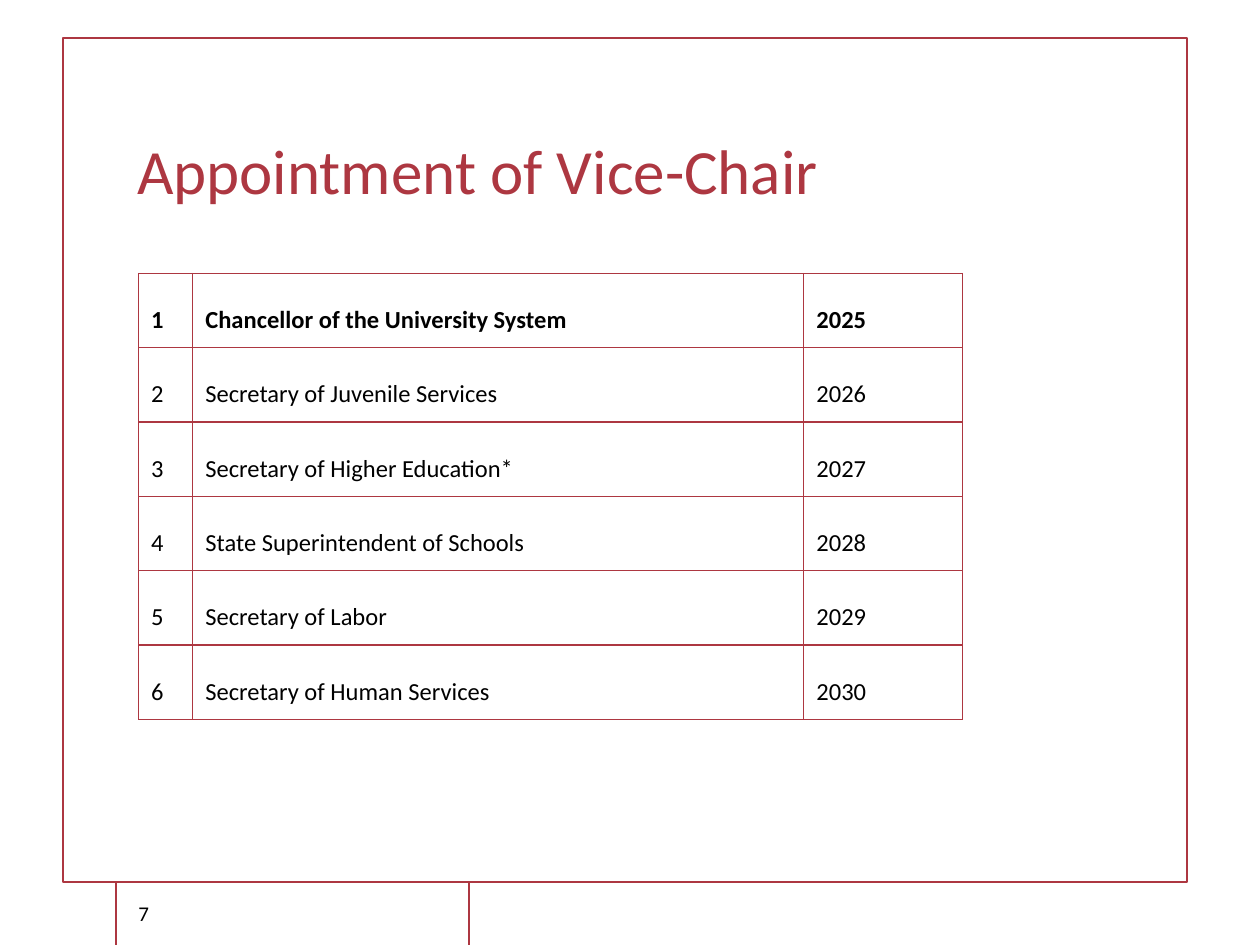
from lxml.etree import SubElement
from pptx import Presentation
from pptx.dml.color import RGBColor
from pptx.enum.shapes import MSO_SHAPE as SHAPE
from pptx.enum.text import MSO_ANCHOR as ANCHOR
from pptx.oxml.ns import qn
from pptx.util import Inches, Pt

RED, BLACK, WHITE = "AD3741", "000000", "FFFFFF"


def rgb(hex_color):
    return RGBColor.from_string(hex_color)


def write(tf, text, size=14, color=BLACK, bold=False, font="Calibri"):
    r = tf.paragraphs[0].add_run()
    r.text = text
    r.font.name = font
    r.font.size = Pt(size)
    r.font.bold = bold
    r.font.color.rgb = rgb(color)


class Deck:
    def __init__(self, slide, accent=RED):
        self.s = slide
        self.accent = accent

    def frame(self, *box):
        sp = self.s.shapes.add_shape(SHAPE.RECTANGLE, *map(Inches, box))
        sp.shadow.inherit = False
        sp.fill.solid()
        sp.fill.fore_color.rgb = rgb(WHITE)
        sp.line.color.rgb = rgb(self.accent)
        sp.line.width = Pt(1.25)

    def text(self, text, *box, anchor=ANCHOR.MIDDLE, **fmt):
        tf = self.s.shapes.add_textbox(*map(Inches, box)).text_frame
        tf.word_wrap = True
        tf.vertical_anchor = anchor
        write(tf, text, **fmt)

    def border(self, cell, width=0.75):
        tcPr = cell._tc.get_or_add_tcPr()
        for i, side in enumerate(("lnL", "lnR", "lnT", "lnB")):
            # Borders must come before the fill
            ln = tcPr.makeelement(qn(f"a:{side}"), w=str(Pt(width)))
            fill = SubElement(ln, qn("a:solidFill"))
            SubElement(fill, qn("a:srgbClr"), val=self.accent)
            tcPr.insert(i, ln)

    def table(self, rows, left, top, widths, row_height, bold_row=0):
        shape = self.s.shapes.add_table(
            len(rows), len(widths), Inches(left), Inches(top),
            Inches(sum(widths)), Inches(row_height * len(rows)))
        table = shape.table
        table.first_row = table.horz_banding = False
        for column, width in zip(table.columns, widths):
            column.width = Inches(width)
        for i, values in enumerate(rows):
            table.rows[i].height = Inches(row_height)
            for j, value in enumerate(values):
                cell = table.cell(i, j)
                cell.fill.background()
                cell.vertical_anchor = ANCHOR.BOTTOM
                cell.margin_left = cell.margin_right = Inches(0.1)
                cell.margin_top = cell.margin_bottom = Inches(0.1)
                write(cell.text_frame, value, bold=i == bold_row)
                self.border(cell)


def main():
    prs = Presentation()
    prs.slide_width, prs.slide_height = Inches(10), Inches(7.5)
    deck = Deck(prs.slides.add_slide(prs.slide_layouts[6]))

    # Page frame and number tab
    deck.frame(0.5, 0.3, 8.92, 6.7)
    deck.frame(0.92, 7, 2.8, 0.51)

    # Title and page number
    deck.text("Appointment of Vice-Chair", 0.99, 0.33, 8.02, 1.36,
              anchor=ANCHOR.BOTTOM, size=36, color=RED)
    deck.text("7", 1, 7.05, 0.7, 0.4, size=12)

    # Rotation of offices, one year each
    offices = [
        "Chancellor of the University System",
        "Secretary of Juvenile Services",
        "Secretary of Higher Education*",
        "State Superintendent of Schools",
        "Secretary of Labor",
        "Secretary of Human Services",
    ]
    rows = [(str(n), office, str(2024 + n))
            for n, office in enumerate(offices, 1)]
    deck.table(rows, 1.1, 2.17, (0.43, 4.85, 1.26), 0.59)

    prs.save("out.pptx")


if __name__ == "__main__":
    main()
